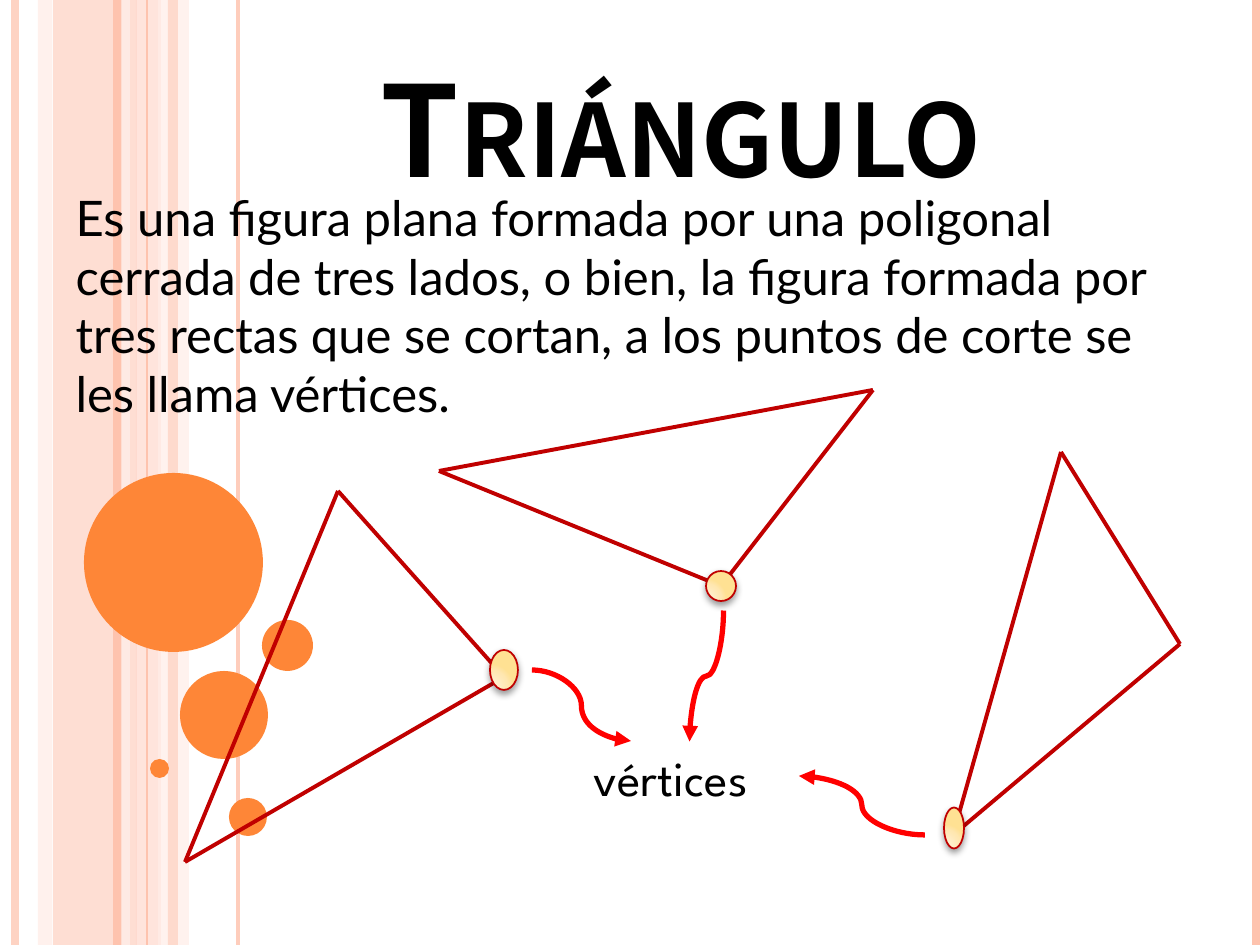
import pptx
import pptx.util
import pptx.dml.color
import pptx.enum.shapes
import pptx.enum.text
import pptx.oxml
import pptx.oxml.ns

RGB = pptx.dml.color.RGBColor
SHAPE = pptx.enum.shapes.MSO_SHAPE
LINK = pptx.enum.shapes.MSO_CONNECTOR
ANCHOR = pptx.enum.text.MSO_ANCHOR
ALIGN = pptx.enum.text.PP_ALIGN
FIT = pptx.enum.text.MSO_AUTO_SIZE
Pt = pptx.util.Pt
qn = pptx.oxml.ns.qn
NS = pptx.oxml.ns.nsdecls("a")

ROSE = RGB(0xFE, 0xC3, 0xAE)
PEACH = RGB(0xFF, 0xD9, 0xCE)
BLUSH = RGB(0xFF, 0xED, 0xE8)
ORANGE = RGB(0xFE, 0x86, 0x37)
CREAM = [(0, RGB(0xFF, 0xF0, 0xD1)), (30, RGB(0xFF, 0xEF, 0xCC)),
         (75, RGB(0xFF, 0xE7, 0xB1)), (100, RGB(0xFF, 0xE1, 0x93))]
WINE = RGB(0xC0, 0x00, 0x00)
RED = RGB(0xFF, 0x00, 0x00)
BLACK = RGB(0x00, 0x00, 0x00)

WIDE, HIGH = 1260, 945
BANDS = [(53, 84, ROSE, 54), (38, 14, PEACH, 36),
         (136, 25, PEACH, 70), (158, 31, BLUSH, 71)]
RULES = [(15, 4.5, ROSE, 73), (126, 4.5, BLUSH, 83), (117, 4.5, ROSE, 100),
         (238, 2.25, ROSE, 82), (147, 0.75, ROSE, 100), (1256, 4.5, ROSE, 100)]
DISCS = [(0, 0, 179), (96, 198, 88), (66, 286, 19), (145, 325, 38), (178, 147, 51)]
BODY = ("Es una figura plana formada por una poligonal cerrada de tres lados, "
        "o bien, la figura formada por tres rectas que se cortan, a los puntos "
        "de corte se les llama vértices.")


def px(*vals):
    """Turn px lengths into EMU."""
    return [pptx.util.Emu(round(v * 914400 / 126)) for v in vals]


def fade(elem, pct):
    """Set the opacity of the solid colour in an element."""
    color = next(elem.iter(qn("a:srgbClr")))
    color.append(pptx.oxml.parse_xml(f'<a:alpha {NS} val="{pct * 1000}"/>'))


def form(shapes, kind, box, color):
    """Add a plain filled shape."""
    shape = shapes.add_shape(kind, *px(*box))
    shape.shadow.inherit = False
    shape.fill.solid()
    shape.fill.fore_color.rgb = color
    shape.line.fill.background()
    return shape


def join(shapes, start, end, color, width, kind=LINK.STRAIGHT):
    """Add a connector without shadow."""
    line = shapes.add_connector(kind, *px(*start, *end))
    line.line.color.rgb = color
    line.line.width = Pt(width)
    line._element.spPr.append(pptx.oxml.parse_xml(f"<a:effectLst {NS}/>"))
    return line


def stripe(shapes, left, width, color, pct):
    """Add one full-height translucent band."""
    shape = form(shapes, SHAPE.RECTANGLE, (left, 0, width, HIGH), color)
    fade(shape._element.spPr, pct)


def decor(shapes):
    """Draw the bands, rules and discs of the theme."""
    for band in BANDS:
        stripe(shapes, *band)
    for left, width, color, pct in RULES:
        rule = join(shapes, (left, 0), (left, HIGH), color, width)
        if pct < 100:
            fade(rule._element.spPr, pct)
    stripe(shapes, 168, 10, ROSE, 51)
    for left, top, size in DISCS:
        form(shapes, SHAPE.OVAL, (84 + left, 473 + top, size, size), ORANGE)


def dot(shapes, mid, size):
    """Mark a vertex with a shaded oval."""
    box = (mid[0] - size[0] / 2, mid[1] - size[1] / 2, *size)
    oval = form(shapes, SHAPE.OVAL, box, CREAM[0][1])
    oval.line.color.rgb = WINE
    oval.line.width = Pt(1)
    stops = "".join(f'<a:gs pos="{pos * 1000}"><a:srgbClr val="{color}"/></a:gs>'
                    for pos, color in CREAM)
    grad = pptx.oxml.parse_xml(
        f'<a:gradFill {NS}><a:gsLst>{stops}</a:gsLst><a:path path="circle">'
        '<a:fillToRect l="5000" t="100000" r="120000" b="10000"/></a:path></a:gradFill>')
    props = oval._element.spPr
    props.replace(props.find(qn("a:solidFill")), grad)
    props.find(qn("a:effectLst")).append(pptx.oxml.parse_xml(
        f'<a:outerShdw {NS} blurRad="{Pt(4)}" dist="{Pt(2)}" dir="5400000" rotWithShape="0">'
        '<a:srgbClr val="000000"><a:alpha val="40000"/></a:srgbClr></a:outerShdw>'))


def figure(shapes, left, top, points, mid, size):
    """Draw a triangle with one marked vertex as a group."""
    parts = shapes.add_group_shape().shapes
    spots = [(left + x, top + y) for x, y in points]
    for start, end in zip(spots, spots[1:] + spots[:1]):
        join(parts, start, end, WINE, 2.25)
    dot(parts, (left + mid[0], top + mid[1]), size)


def arrow(shapes, start, end, turn=0):
    """Draw a curved red arrow, turned by some degrees."""
    line = join(shapes, start, end, RED, 3, LINK.CURVE)
    line.line._get_or_add_ln().append(
        pptx.oxml.parse_xml(f'<a:tailEnd {NS} type="triangle"/>'))
    if turn:
        line._element.spPr.find(qn("a:xfrm")).set("rot", str(turn * 60000))


def write(shape, box, text, font, size, anchor, wrap=True):
    """Place a text shape and format its only paragraph."""
    shape.left, shape.top, shape.width, shape.height = px(*box)
    frame = shape.text_frame
    frame.text = text
    frame.word_wrap = wrap
    frame.auto_size = FIT.NONE
    frame.vertical_anchor = anchor
    para = frame.paragraphs[0]
    para.space_before = Pt(0)
    run = para.runs[0]
    run.font.name = font
    run.font.size = Pt(size)
    run.font.color.rgb = BLACK
    return para


def words(slide):
    """Fill the title, the definition and the label."""
    title, body = slide.shapes.title, slide.placeholders[1]
    tree = slide.shapes._spTree
    tree.append(body._element)
    para = write(body, (63, 169, 1139, 260), BODY, "Lato", 28, ANCHOR.BOTTOM)
    props = para._p.get_or_add_pPr()
    props.set("marL", "0")
    props.set("indent", "0")
    props.append(pptx.oxml.parse_xml(f"<a:buNone {NS}/>"))
    tree.append(title._element)
    para = write(title, (358, 45, 646, 165), "Triángulo", "Noto Sans CJK SC", 72,
                 ANCHOR.MIDDLE, False)
    para.alignment = ALIGN.CENTER
    para.runs[0].font.bold = True
    para.runs[0]._r.get_or_add_rPr().set("cap", "small")
    box = (581, 741, 218, 72)
    write(slide.shapes.add_textbox(*px(*box)), box, "vértices",
          "League Spartan", 28, ANCHOR.TOP)


def main():
    """Build the slide and save it."""
    deck = pptx.Presentation()
    deck.slide_width, deck.slide_height = px(WIDE, HIGH)
    slide = deck.slides.add_slide(deck.slide_layouts[1])
    shapes = slide.shapes
    decor(shapes)
    words(slide)
    figure(shapes, 439, 390, [(0, 81), (434, 0), (282, 196)], (282, 196), (30, 30))
    figure(shapes, 953, 452, [(108, 0), (227, 192), (0, 383)], (1, 376), (20, 41))
    figure(shapes, 185, 491, [(153, 0), (319, 186), (0, 371)], (319, 179), (28, 40))
    arrow(shapes, (532, 670), (631, 741))
    arrow(shapes, (925, 835), (799, 776))
    arrow(shapes, (641, 659), (772, 693), 90)
    deck.save("out.pptx")


if __name__ == "__main__":
    main()
